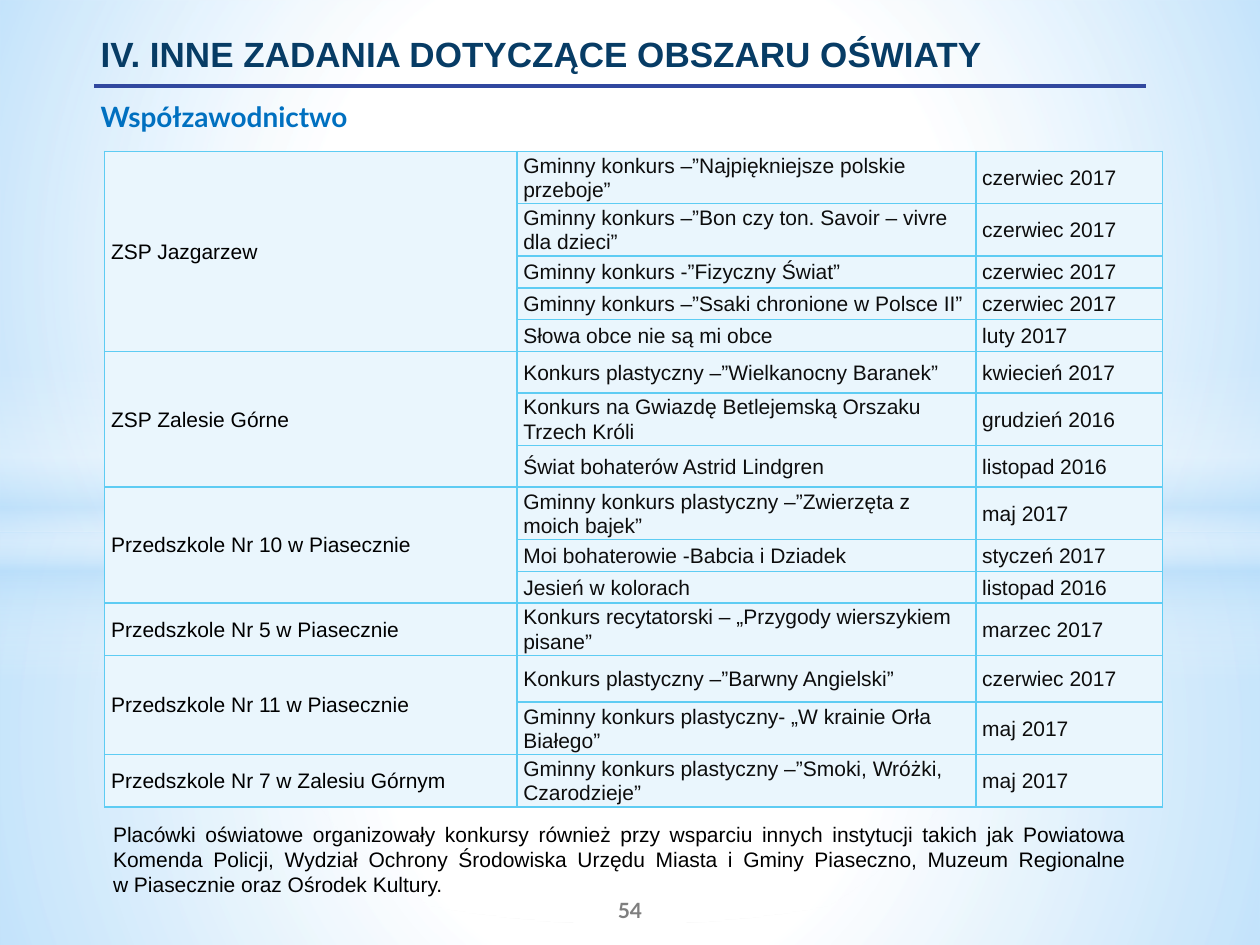
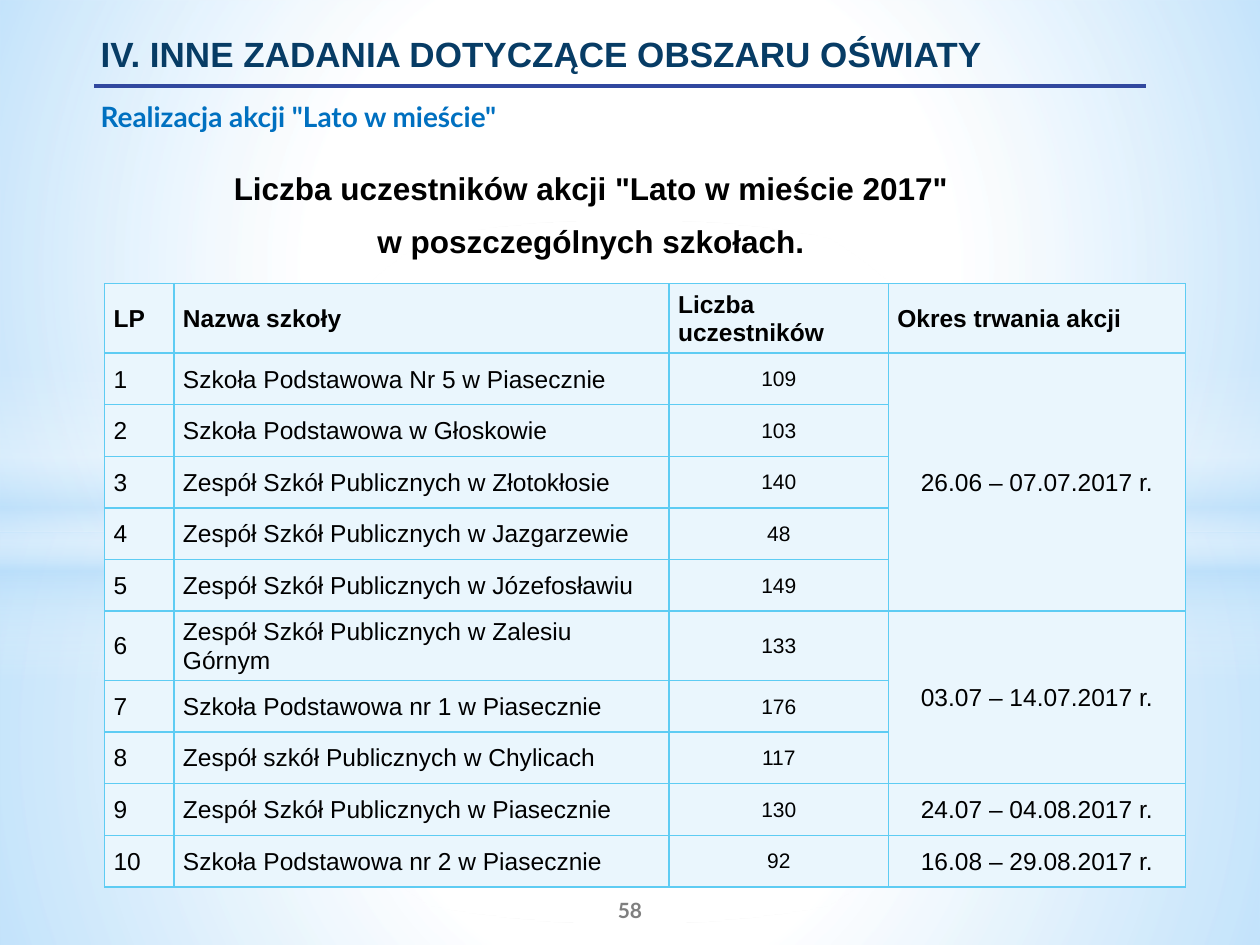
from copy import deepcopy
from dataclasses import dataclass

from pptx import Presentation
from pptx.dml.color import RGBColor
from pptx.enum.shapes import MSO_CONNECTOR, MSO_SHAPE
from pptx.enum.text import MSO_ANCHOR, PP_ALIGN
from pptx.oxml import parse_xml
from pptx.oxml.ns import nsdecls, qn
from pptx.oxml.xmlchemy import OxmlElement
from pptx.util import Cm, Pt


@dataclass(frozen=True)
class Theme:
    white: str = "FFFFFF"
    sky: str = "B4DCFA"
    title: str = "073C65"
    rule: str = "31489F"
    subtitle: str = "0070C0"
    ink: str = "000000"
    soft_ink: str = "0D0D0D"
    page_number: str = "7F7F7F"
    cell: str = "EAF6FD"
    border: str = "5ECCF3"
    body_font: str = "Arial"
    accent_font: str = "Lato"
    title_size: int = 20
    heading_size: int = 18
    subtitle_size: int = 16
    table_size: int = 14
    small_size: int = 12
    line_spacing: float = 1.04


THEME = Theme()
CENTER = PP_ALIGN.CENTER
SECTION = "IV. INNE ZADANIA DOTYCZĄCE OBSZARU OŚWIATY"

# Each glow: shape, (left, top, width, height), stops (position, colour, opacity), direction
CIRCLE = '<a:path path="circle"><a:fillToRect l="50000" t="50000" r="50000" b="50000"/></a:path>'
DOWN = '<a:lin ang="5400000" scaled="0"/>'
GLOWS = [
    (MSO_SHAPE.RECTANGLE, (0, 10.74, 25.4, 8.31),
     [(0, THEME.white, 91), (37, THEME.white, 76), (100, THEME.sky, 79)], CIRCLE),
    (MSO_SHAPE.RECTANGLE, (0, 0, 25.4, 10.74),
     [(0, THEME.white, 89), (48, THEME.white, 62), (100, THEME.sky, 79)], CIRCLE),
    (MSO_SHAPE.RECTANGLE, (0, 7.37, 25.4, 6.35),
     [(0, THEME.white, 0), (29, THEME.white, 30), (45, THEME.sky, 40),
      (55, THEME.white, 26), (65, THEME.sky, 60), (100, THEME.white, 0)], DOWN),
    (MSO_SHAPE.OVAL, (0, 4.45, 25.4, 14.17),
     [(0, THEME.white, 100), (54, THEME.white, 0)], CIRCLE),
]

CONTESTS = [
    ("ZSP Jazgarzew", [
        ("Gminny konkurs –”Najpiękniejsze polskie przeboje”", "czerwiec 2017"),
        ("Gminny konkurs –”Bon czy ton. Savoir – vivre dla dzieci”", "czerwiec 2017"),
        ("Gminny konkurs -”Fizyczny Świat”", "czerwiec 2017"),
        ("Gminny konkurs –”Ssaki chronione w Polsce II”", "czerwiec 2017"),
        ("Słowa obce nie są mi obce", "luty 2017")]),
    ("ZSP Zalesie Górne", [
        ("Konkurs plastyczny –”Wielkanocny Baranek”", "kwiecień 2017"),
        ("Konkurs na Gwiazdę Betlejemską Orszaku Trzech Króli", "grudzień 2016"),
        ("Świat bohaterów Astrid Lindgren", "listopad 2016")]),
    ("Przedszkole Nr 10 w Piasecznie", [
        ("Gminny konkurs plastyczny –”Zwierzęta z moich bajek”", "maj 2017"),
        ("Moi bohaterowie -Babcia i Dziadek", "styczeń 2017"),
        ("Jesień w kolorach", "listopad 2016")]),
    ("Przedszkole Nr 5 w Piasecznie", [
        ("Konkurs recytatorski – „Przygody wierszykiem pisane”", "marzec 2017")]),
    ("Przedszkole Nr 11 w Piasecznie", [
        ("Konkurs plastyczny –”Barwny Angielski”", "czerwiec 2017"),
        ("Gminny konkurs plastyczny- „W krainie Orła Białego”", "maj 2017")]),
    ("Przedszkole Nr 7 w Zalesiu Górnym", [
        ("Gminny konkurs plastyczny –”Smoki, Wróżki, Czarodzieje”", "maj 2017")]),
]
CONTEST_HEIGHTS = [0.99, 0.99, 0.64, 0.64, 0.64, 0.84, 0.99, 0.84,
                   0.97, 0.64, 0.64, 0.99, 0.94, 0.99, 0.99]
PARTNERS = (
    "Placówki oświatowe organizowały konkursy również przy wsparciu innych instytucji "
    "takich jak Powiatowa Komenda Policji, Wydział Ochrony Środowiska Urzędu Miasta "
    "i Gminy Piaseczno, Muzeum Regionalne\vw Piasecznie oraz Ośrodek Kultury.")

SUMMER_HEADER = ["LP", "Nazwa szkoły", "Liczba uczestników", "Okres trwania akcji"]
SUMMER_TERMS = [
    ("26.06 – 07.07.2017 r.", [
        ("Szkoła Podstawowa Nr 5 w Piasecznie", 109),
        ("Szkoła Podstawowa w Głoskowie", 103),
        ("Zespół Szkół Publicznych w Złotokłosie", 140),
        ("Zespół Szkół Publicznych w Jazgarzewie", 48),
        ("Zespół Szkół Publicznych w Józefosławiu", 149)]),
    ("03.07 – 14.07.2017 r.", [
        ("Zespół Szkół Publicznych w Zalesiu Górnym", 133),
        ("Szkoła Podstawowa nr 1 w Piasecznie", 176),
        ("Zespół szkół Publicznych w Chylicach", 117)]),
    ("24.07 – 04.08.2017 r.", [("Zespół Szkół Publicznych w Piasecznie", 130)]),
    ("16.08 – 29.08.2017 r.", [("Szkoła Podstawowa nr 2 w Piasecznie", 92)]),
]
SUMMER_HEIGHTS = [1.4] + [1.04] * 5 + [1.4] + [1.04] * 4


def write(frame, text, *, size, color=THEME.ink, font=THEME.body_font, bold=False,
          align=PP_ALIGN.LEFT, spacing=None, after=0, indent=0):
    """Fill a text frame: a newline starts a paragraph, a vertical tab breaks a line."""
    for index, line in enumerate(text.split("\n")):
        para = frame.add_paragraph() if index else frame.paragraphs[0]
        para.text = line
        para.alignment = align
        para.space_after = Pt(after)
        if spacing:
            para.line_spacing = spacing
        if indent:
            para._p.get_or_add_pPr().set("marL", str(Cm(indent)))
        for span in para.runs:
            span.font.size = Pt(size)
            span.font.name = font
            span.font.bold = bold
            span.font.color.rgb = RGBColor.from_string(color)
        for line_break in para._p.findall(qn("a:br")):
            line_break.append(deepcopy(para.runs[0]._r.rPr))


def with_groups(groups):
    """Yield (group name or None when it repeats, row) for each row of each group."""
    for name, rows in groups:
        for index, row in enumerate(rows):
            yield (None if index else name), row


class Report:
    """The deck, its theme and the slide being drawn."""

    def __init__(self, theme):
        self.theme = theme
        self.deck = Presentation()
        self.deck.slide_width, self.deck.slide_height = Cm(25.4), Cm(19.05)
        self.page = None

    def start_page(self, subtitle, number):
        theme = self.theme
        self.page = self.deck.slides.add_slide(self.deck.slide_layouts[6])
        background = self.page.background.fill
        background.solid()
        background.fore_color.rgb = RGBColor.from_string(theme.white)
        for glow in GLOWS:
            self.add_glow(*glow)
        self.add_text(str(number), (10.16, 17.83, 5.08, 1.02), anchor=MSO_ANCHOR.MIDDLE,
                      size=theme.small_size, color=theme.page_number,
                      font=theme.accent_font, bold=True, align=CENTER)
        self.add_text(SECTION, (1.27, 0.53, 22.86, 2.21), size=theme.title_size,
                      color=theme.title, bold=True, indent=0.51)
        self.add_rule(1.9, 23.11, 1.73)
        self.add_text(subtitle, (1.78, 1.88, 21.87, 0.94), size=theme.subtitle_size,
                      color=theme.subtitle, font=theme.accent_font, bold=True)

    def add_glow(self, kind, place, stops, direction):
        shape = self.page.shapes.add_shape(kind, *map(Cm, place))
        stop_xml = "".join(
            f'<a:gs pos="{position * 1000}"><a:srgbClr val="{color}">'
            f'<a:alpha val="{opacity * 1000}"/></a:srgbClr></a:gs>'
            for position, color, opacity in stops)
        shape._element.spPr.append(parse_xml(
            f'<a:gradFill {nsdecls("a")} rotWithShape="1">'
            f'<a:gsLst>{stop_xml}</a:gsLst>{direction}</a:gradFill>'))
        shape.line.fill.background()
        shape.shadow.inherit = False

    def add_rule(self, left, right, top):
        rule = self.page.shapes.add_connector(
            MSO_CONNECTOR.STRAIGHT, Cm(left), Cm(top), Cm(right), Cm(top))
        rule.line.color.rgb = RGBColor.from_string(self.theme.rule)
        rule.line.width = Pt(2.25)
        rule._element.spPr.append(OxmlElement("a:effectLst"))

    def add_text(self, text, place, anchor=MSO_ANCHOR.TOP, **style):
        frame = self.page.shapes.add_textbox(*map(Cm, place)).text_frame
        frame.word_wrap = True
        frame.vertical_anchor = anchor
        write(frame, text, **style)

    def add_table(self, rows, corner, widths, heights, inset, style_of):
        """Draw rows of cells; None joins a cell to the one above it."""
        table = self.page.shapes.add_table(
            len(rows), len(widths), *map(Cm, corner),
            Cm(sum(widths)), Cm(sum(heights))).table
        table.first_row = table.horz_banding = False
        for column, width in zip(table.columns, widths):
            column.width = Cm(width)
        for row, height in zip(table.rows, heights):
            row.height = Cm(height)
        for row, values in enumerate(rows):
            for column, value in enumerate(values):
                cell = table.cell(row, column)
                self.dress_cell(cell, inset)
                if value is not None:
                    write(cell.text_frame, str(value), spacing=self.theme.line_spacing,
                          **style_of(row, column))
        for column in range(len(widths)):
            starts = [row for row, values in enumerate(rows) if values[column] is not None]
            for start, end in zip(starts, starts[1:] + [len(rows)]):
                if end - start > 1:
                    table.cell(start, column).merge(table.cell(end - 1, column))

    def dress_cell(self, cell, inset):
        cell.vertical_anchor = MSO_ANCHOR.MIDDLE
        cell.margin_left = cell.margin_right = Cm(inset)
        cell.margin_top = cell.margin_bottom = 0
        cell.fill.solid()
        cell.fill.fore_color.rgb = RGBColor.from_string(self.theme.cell)
        for index, side in enumerate("LRTB"):
            cell._tc.get_or_add_tcPr().insert(index, parse_xml(
                f'<a:ln{side} {nsdecls("a")} w="{Pt(1)}"><a:solidFill>'
                f'<a:srgbClr val="{self.theme.border}"/></a:solidFill></a:ln{side}>'))


def contest_style(row, column):
    return {"size": THEME.small_size, "color": THEME.soft_ink if column else THEME.ink}


def summer_style(row, column):
    if row == 0:
        return {"size": THEME.table_size, "bold": True}
    return {"size": THEME.small_size if column == 2 else THEME.table_size,
            "align": CENTER if column >= 2 else PP_ALIGN.LEFT}


def add_contests_page(report):
    report.start_page("Współzawodnictwo", 54)
    rows = [(school, *contest) for school, contest in with_groups(CONTESTS)]
    report.add_table(rows, (2.11, 3.05), [8.31, 9.25, 3.76], CONTEST_HEIGHTS,
                     0.13, contest_style)
    report.add_text(PARTNERS, (2.03, 16.43, 20.93, 1.8), size=THEME.small_size,
                    align=PP_ALIGN.JUSTIFY)


def add_summer_page(report):
    report.start_page('Realizacja akcji "Lato w mieście"', 58)
    report.add_text('Liczba uczestników akcji "Lato w mieście 2017"\nw poszczególnych szkołach.',
                    (1.35, 3.25, 21.13, 2.13), size=THEME.heading_size, bold=True,
                    align=CENTER, spacing=THEME.line_spacing, after=8)
    rows = [SUMMER_HEADER] + [
        (number, *school, term)
        for number, (term, school) in enumerate(with_groups(SUMMER_TERMS), 1)]
    report.add_table(rows, (2.11, 5.72), [1.4, 9.98, 4.42, 5.99], SUMMER_HEIGHTS,
                     0.18, summer_style)


def main():
    report = Report(THEME)
    add_contests_page(report)
    add_summer_page(report)
    report.deck.save("out.pptx")


if __name__ == "__main__":
    main()
